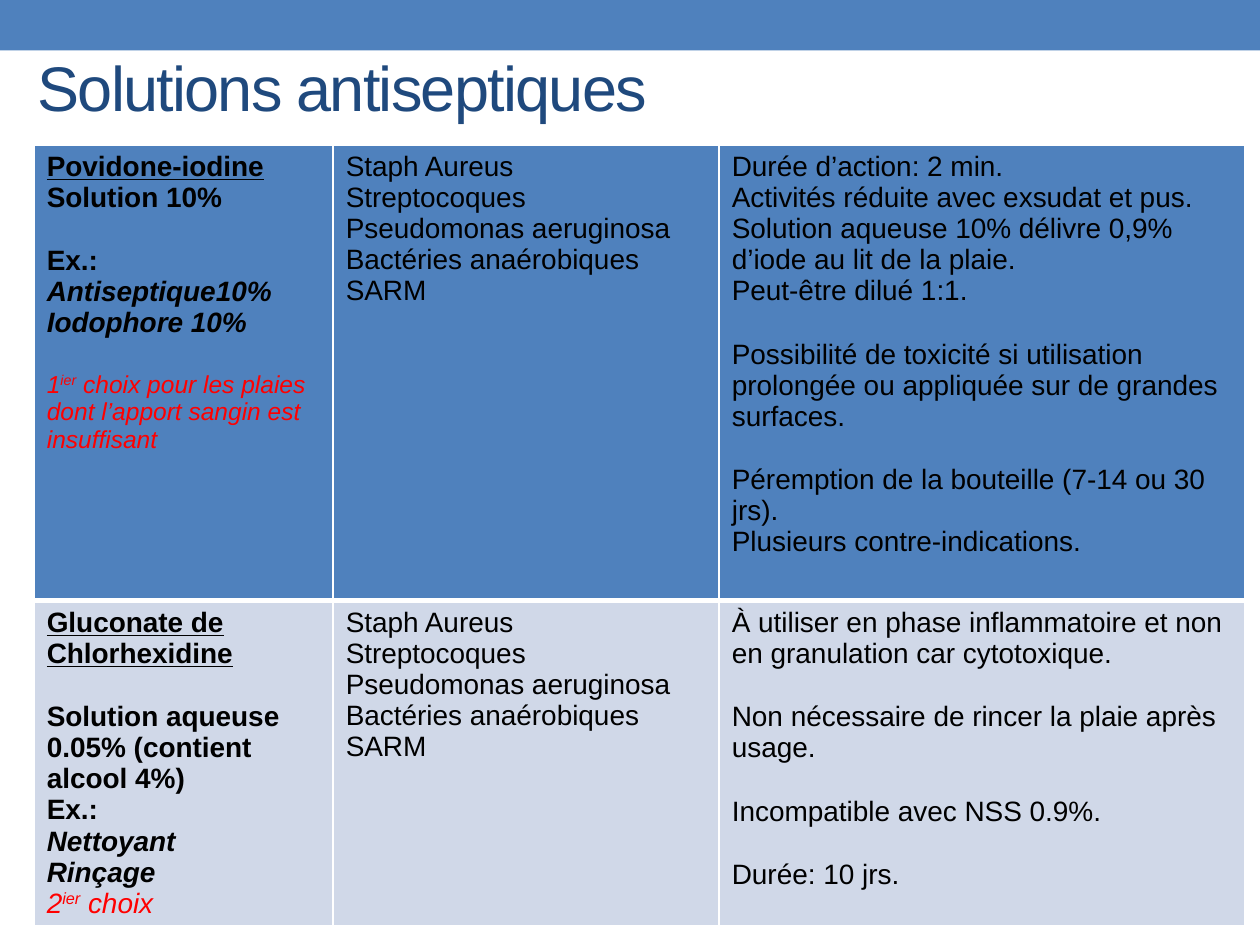
from lxml.etree import SubElement
from pptx import Presentation
from pptx.dml.color import RGBColor
from pptx.enum.shapes import MSO_SHAPE as Shape
from pptx.enum.text import MSO_ANCHOR as Anchor
from pptx.oxml.ns import qn
from pptx.util import Cm, Pt

BLUE = RGBColor(0x4F, 0x81, 0xBD)
PALE = RGBColor(0xD0, 0xD8, 0xE8)
NAVY = RGBColor(0x1F, 0x49, 0x7D)
RED = RGBColor(0xFF, 0x00, 0x00)
BLACK = RGBColor(0x00, 0x00, 0x00)
WHITE = RGBColor(0xFF, 0xFF, 0xFF)
FONT = "Arial"
LINE_GAP = Pt(18.4)

HEADING = dict(bold=True, underline=True)
BOLD = dict(bold=True)
PRODUCT = dict(bold=True, italic=True)
CHOICE = dict(italic=True, color=RED)

GERMS = [
    "Staph Aureus",
    "Streptocoques",
    "Pseudomonas aeruginosa",
    "Bactéries anaérobiques",
    "SARM",
]


def add_run(paragraph, text, size=16, color=BLACK, bold=False, italic=False,
            underline=False, baseline=None, spacing=None):
    """Append a formatted run of text to the paragraph."""
    run = paragraph.add_run()
    run.text = text
    font = run.font
    font.name, font.size = FONT, Pt(size)
    font.bold, font.italic, font.underline = bold, italic, underline
    font.color.rgb = color
    properties = run._r.get_or_add_rPr()
    if baseline:
        properties.set("baseline", str(baseline))
    if spacing:
        properties.set("spc", str(spacing))


def choice(rank, rest, size=16):
    """Return the runs of a ranked choice with a raised ordinal ending."""
    style = dict(CHOICE, size=size)
    return [(rank, style), ("ier", dict(style, baseline=30000)), (rest, style)]


def plain(*groups):
    """Return groups of paragraphs in the default format."""
    return [[[(line, {})] for line in group] for group in groups]


ROWS = [
    (
        BLUE,
        [
            [
                [[("Povidone-iodine", HEADING)], [("Solution 10%", BOLD)]],
                [[("Ex.: ", BOLD), ("Antiseptique10%", PRODUCT)],
                 [("Iodophore 10%", PRODUCT)]],
                [choice("1", " choix pour les plaies dont l’apport sangin est insuffisant", 14)],
            ],
            plain(GERMS),
            plain(
                ["Durée d’action: 2 min.",
                 "Activités réduite avec exsudat et pus.",
                 "Solution aqueuse 10% délivre 0,9% d’iode au lit de la plaie.",
                 "Peut-être dilué 1:1."],
                ["Possibilité de toxicité si utilisation prolongée ou appliquée "
                 "sur de grandes surfaces."],
                ["Péremption de la bouteille (7-14 ou 30 jrs).",
                 "Plusieurs contre-indications."],
            ),
        ],
    ),
    (
        PALE,
        [
            [
                [[("Gluconate de Chlorhexidine", HEADING)]],
                [[("Solution aqueuse 0.05% (contient alcool 4%)", BOLD)],
                 [("Ex.:", BOLD)],
                 [("Nettoyant", PRODUCT)],
                 [("Rinçage", PRODUCT)],
                 choice("2", " choix")],
            ],
            plain(GERMS),
            plain(
                ["À utiliser en phase inflammatoire et non en granulation car cytotoxique."],
                ["Non nécessaire de rincer la plaie après usage."],
                ["Incompatible avec NSS 0.9%."],
                ["Durée: 10 jrs."],
            ),
        ],
    ),
]


def set_borders(cell, **widths):
    """Draw white cell borders with the given widths in points."""
    properties = cell._tc.get_or_add_tcPr()
    for side in "LRTB":
        line = SubElement(properties, qn(f"a:ln{side}"), w=str(Pt(widths.get(side, 1))))
        fill = SubElement(line, qn("a:solidFill"))
        SubElement(fill, qn("a:srgbClr"), val=str(WHITE))


def fill_cell(cell, groups):
    """Write groups of paragraphs, with a line of space between groups."""
    frame = cell.text_frame
    paragraph = None
    for group in groups:
        for index, runs in enumerate(group):
            first = paragraph is None
            paragraph = frame.paragraphs[0] if first else frame.add_paragraph()
            if index == 0 and not first:
                paragraph.space_before = LINE_GAP
            for text, style in runs:
                add_run(paragraph, text, **style)


def add_band(slide, left, top, width, height):
    """Add the coloured band."""
    band = slide.shapes.add_shape(Shape.RECTANGLE, left, top, width, height)
    band.shadow.inherit = False
    band.fill.solid()
    band.fill.fore_color.rgb = BLUE
    band.line.fill.background()


def add_title(slide, left, top, width, height):
    """Add the slide title."""
    frame = slide.shapes.add_textbox(left, top, width, height).text_frame
    frame.word_wrap = True
    frame.vertical_anchor = Anchor.MIDDLE
    add_run(frame.paragraphs[0], "Solutions antiseptiques", size=36, color=NAVY, spacing=-100)


def add_solutions_table(slide, left, top, width, height):
    """Add the table of antiseptics, their targets and their use."""
    table = slide.shapes.add_table(len(ROWS), 3, left, top, width, height).table
    for column, share in zip(table.columns, (0.247, 0.319, 0.434)):
        column.width = int(width * share)
    for row, share in zip(table.rows, (0.717, 0.283)):
        row.height = int(height * share)
    for row_index, (color, cells) in enumerate(ROWS):
        divider = {"T": 3} if row_index else {"B": 3}
        for column_index, groups in enumerate(cells):
            cell = table.cell(row_index, column_index)
            fill_cell(cell, groups)
            set_borders(cell, **divider)
            cell.fill.solid()
            cell.fill.fore_color.rgb = color


def main():
    """Build and save the presentation."""
    presentation = Presentation()
    presentation.slide_width, presentation.slide_height = Cm(25.4), Cm(19.05)
    slide = presentation.slides.add_slide(presentation.slide_layouts[6])
    add_band(slide, 0, 0, presentation.slide_width, Cm(1.02))
    add_solutions_table(slide, Cm(0.69), Cm(2.92), Cm(24.4), Cm(12.82))
    add_title(slide, Cm(0.51), Cm(0.15), Cm(22.86), Cm(3.18))
    presentation.save("out.pptx")


if __name__ == "__main__":
    main()
